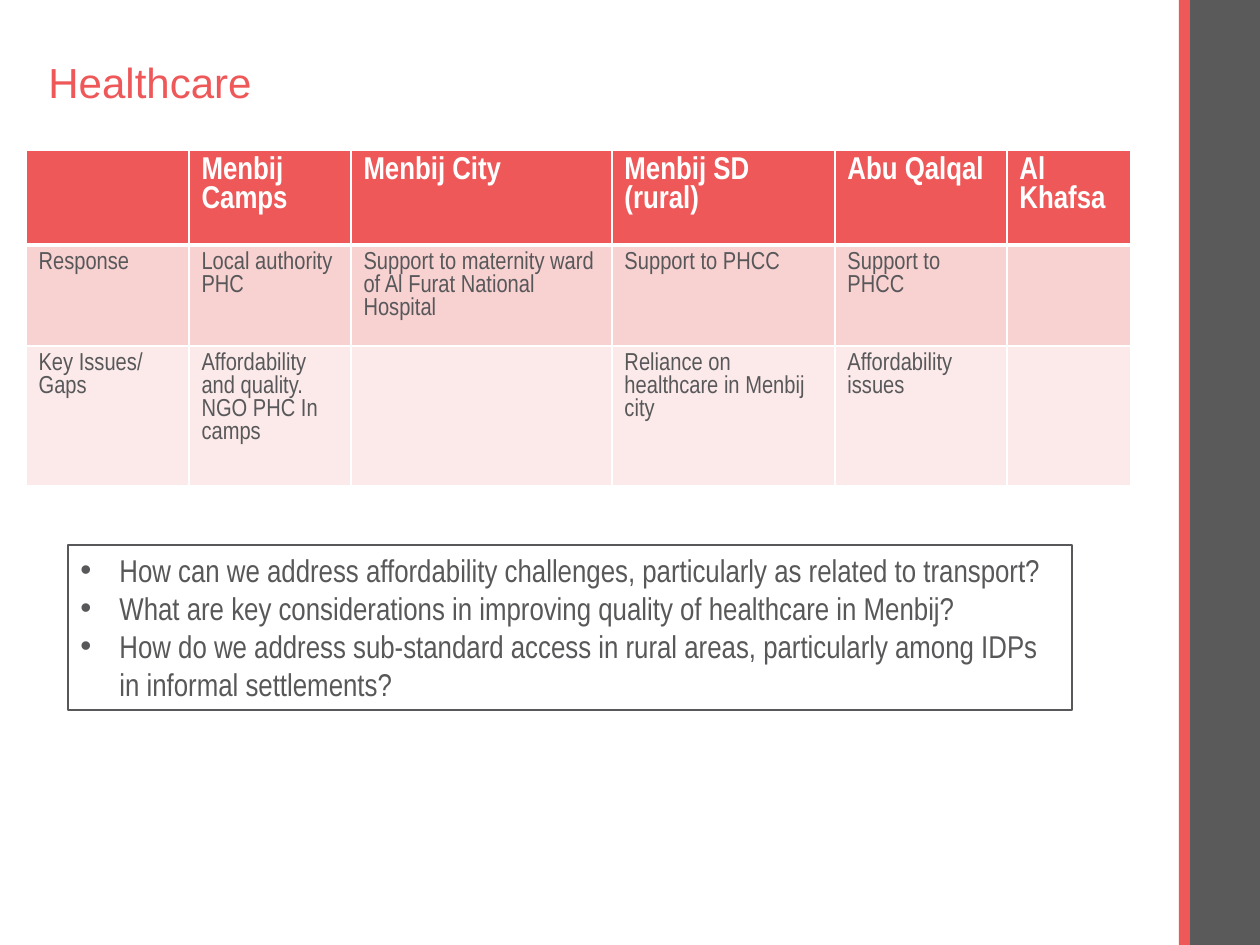
import pptx
import pptx.util
import pptx.dml.color
import pptx.enum.shapes
import pptx.enum.text
import pptx.oxml.ns
import lxml.etree

RGB = pptx.dml.color.RGBColor
RED = RGB(0xEE, 0x58, 0x59)
GRAY = RGB(0x5A, 0x5A, 0x5A)
INK = RGB(0x58, 0x58, 0x5A)
WHITE = RGB(0xFF, 0xFF, 0xFF)
ROSE = RGB(0xF8, 0xD1, 0xD1)
BLUSH = RGB(0xFC, 0xEA, 0xEA)

TITLE = {"name": "Arial", "size": pptx.util.Pt(24), "color": RED}
HEAD = {"name": "Arial Narrow", "size": pptx.util.Pt(18), "bold": True, "color": WHITE}
BODY = {"name": "Arial Narrow", "size": pptx.util.Pt(14), "bold": False, "color": INK}
ASK = {"name": "Arial Narrow", "size": pptx.util.Pt(18), "color": INK}

COLS = [163, 162, 261, 223, 172, 124]
ROWS = [
    (95, RED, HEAD, 3,
     ["", "Menbij Camps", "Menbij City", "Menbij SD (rural)", "Abu Qalqal", "Al Khafsa"]),
    (82, ROSE, BODY, 1,
     ["Response", "Local authority PHC",
      "Support to maternity ward of Al Furat National Hospital",
      "Support to PHCC", "Support to PHCC", ""]),
    (140, BLUSH, BODY, 1,
     ["Key Issues/ Gaps", "Affordability and quality. NGO PHC In camps", "",
      "Reliance on healthcare in Menbij city", "Affordability issues", ""]),
]
ASKS = [
    "How can we address affordability challenges, particularly as related to transport?",
    "What are key considerations in improving quality of healthcare in Menbij?",
    "How do we address sub-standard access in rural areas, particularly among IDPs "
    "in informal settlements?",
]


def px(num):
    return round(num * 914400 / 126)


def style(font, fmt):
    for key, val in fmt.items():
        if key == "color":
            font.color.rgb = val
        else:
            setattr(font, key, val)


def node(top, tag, **atts):
    return lxml.etree.SubElement(top, pptx.oxml.ns.qn(tag), **atts)


def block(slide, box):
    shape = slide.shapes.add_shape(
        pptx.enum.shapes.MSO_SHAPE.RECTANGLE, *map(px, box))
    shape.shadow.inherit = False
    return shape


def sidebar(slide, box):
    """Gray band with a thin red strip over its left edge."""
    left, top, wide, high = box
    for x, w, color in ((left + 9, wide - 9, GRAY), (left, 11, RED)):
        bar = block(slide, (x, top, w, high))
        bar.fill.solid()
        bar.fill.fore_color.rgb = color
        bar.line.fill.background()


def title(slide, box, text):
    frame = slide.shapes.add_textbox(*map(px, box)).text_frame
    frame.word_wrap = True
    frame.vertical_anchor = pptx.enum.text.MSO_ANCHOR.MIDDLE
    para = frame.paragraphs[0]
    para.text = text
    para.line_spacing = 0.9
    style(para.font, TITLE)


def border(cell, base):
    """White cell edges; base is the width of the lower one in points."""
    props = cell._tc.get_or_add_tcPr()
    for side, pts in (("L", 1), ("R", 1), ("T", 1), ("B", base)):
        line = node(props, "a:ln" + side, w=str(pptx.util.Pt(pts)))
        node(node(line, "a:solidFill"), "a:srgbClr", val=str(WHITE))


def grid(slide, left, top):
    high = sum(row[0] for row in ROWS)
    table = slide.shapes.add_table(
        len(ROWS), len(COLS), *map(px, (left, top, sum(COLS), high))).table
    table.horz_banding = False
    for col, wide in zip(table.columns, COLS):
        col.width = px(wide)
    for row, (tall, fill, fmt, base, texts) in zip(table.rows, ROWS):
        row.height = px(tall)
        for cell, text in zip(row.cells, texts):
            border(cell, base)
            cell.fill.solid()
            cell.fill.fore_color.rgb = fill
            para = cell.text_frame.paragraphs[0]
            para.text = text
            style(para.font, fmt)


def asks(slide, box):
    """Framed list of bulleted questions."""
    shape = block(slide, box)
    shape.fill.background()
    shape.line.color.rgb = INK
    shape.line.width = pptx.util.Pt(0.75)
    frame = shape.text_frame
    frame.word_wrap = True
    frame.vertical_anchor = pptx.enum.text.MSO_ANCHOR.TOP
    frame.text = "\n".join(ASKS)
    for para in frame.paragraphs:
        para.alignment = pptx.enum.text.PP_ALIGN.LEFT
        props = para._p.get_or_add_pPr()
        props.set("marL", str(px(39)))
        props.set("indent", str(-px(39)))
        node(props, "a:buFont", typeface="Arial")
        node(props, "a:buChar", char="•")
        style(para.font, ASK)


def main():
    deck = pptx.Presentation()
    deck.slide_width, deck.slide_height = px(1260), px(945)
    slide = deck.slides.add_slide(deck.slide_layouts[6])
    sidebar(slide, (1179, 0, 81, 945))
    title(slide, (36, 54, 1086, 62), "Healthcare")
    grid(slide, 26, 150)
    asks(slide, (68, 545, 1004, 165))
    deck.save("out.pptx")


if __name__ == "__main__":
    main()
